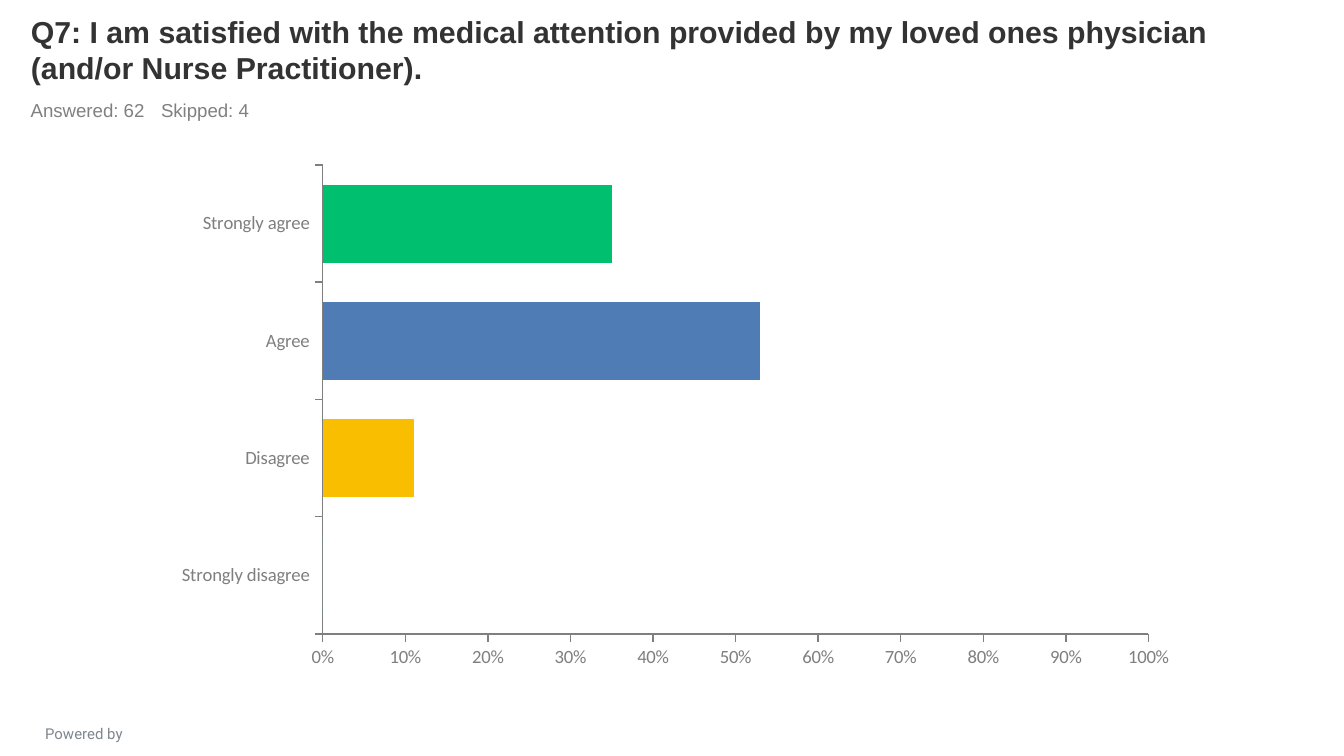
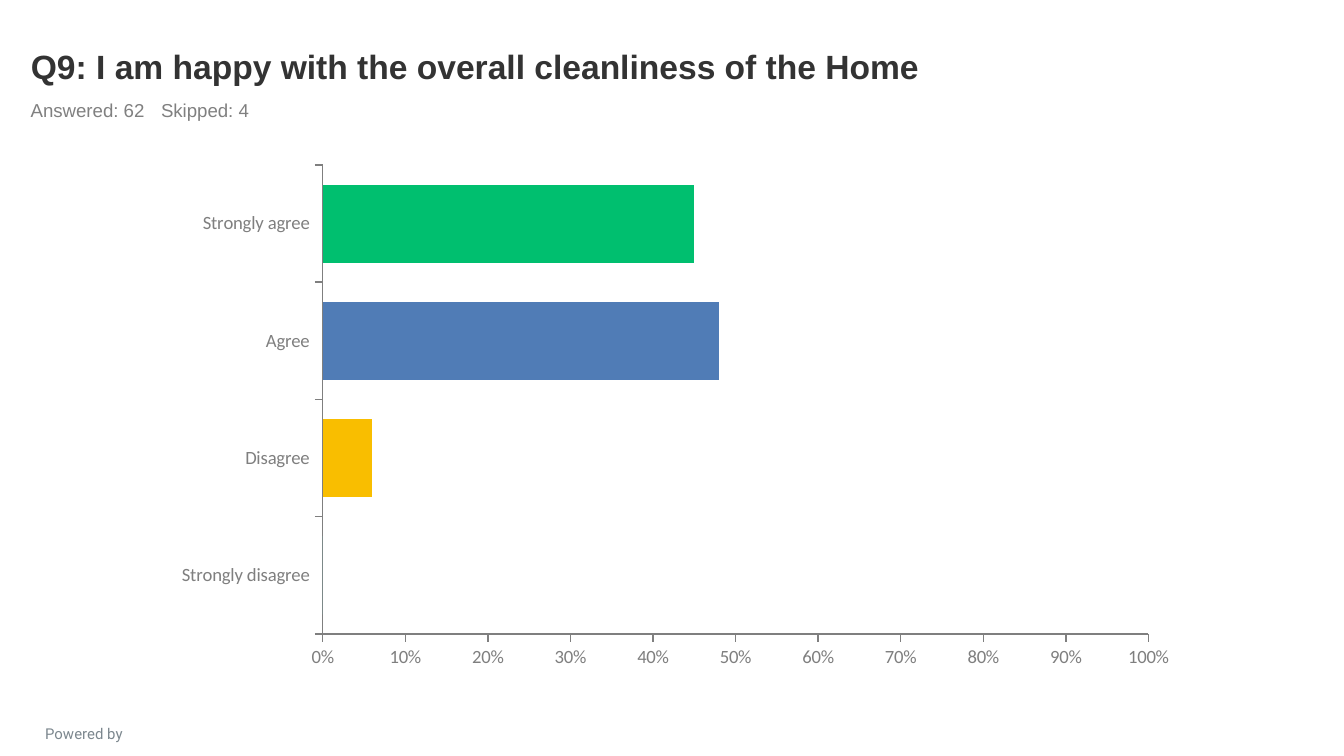
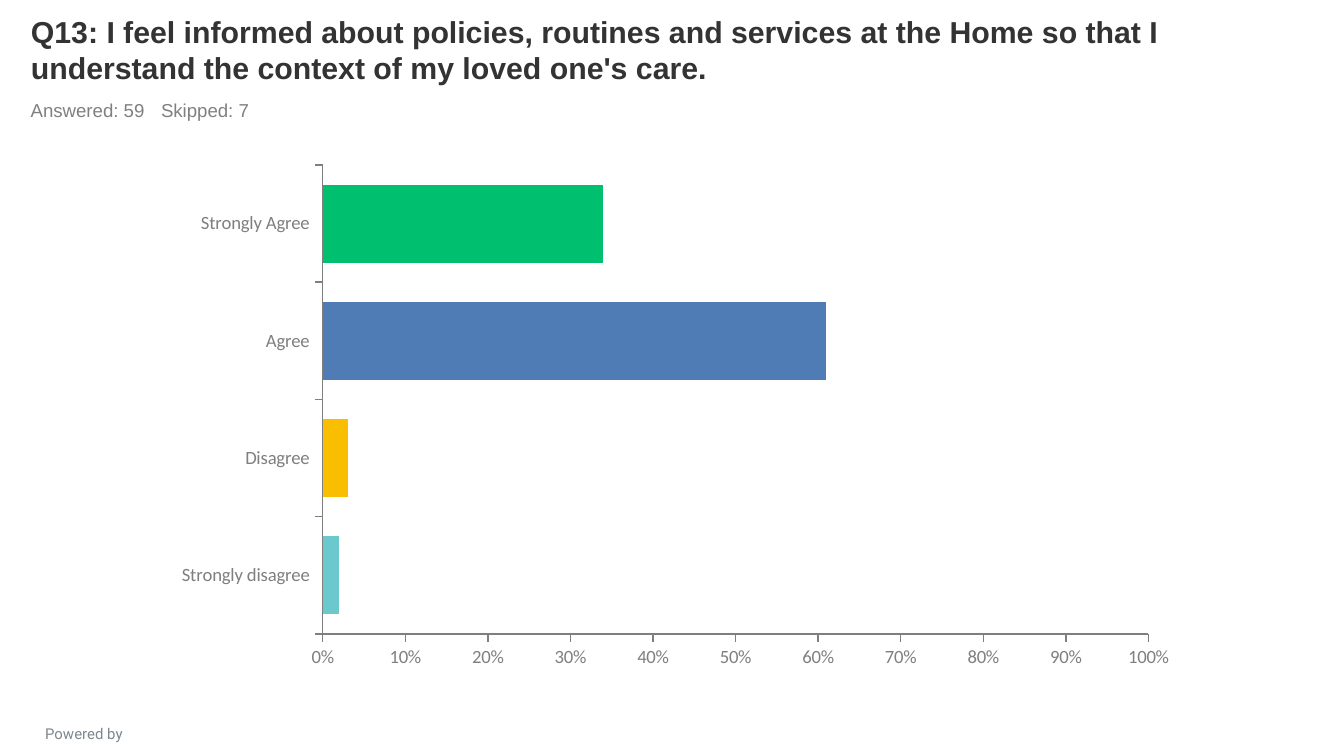
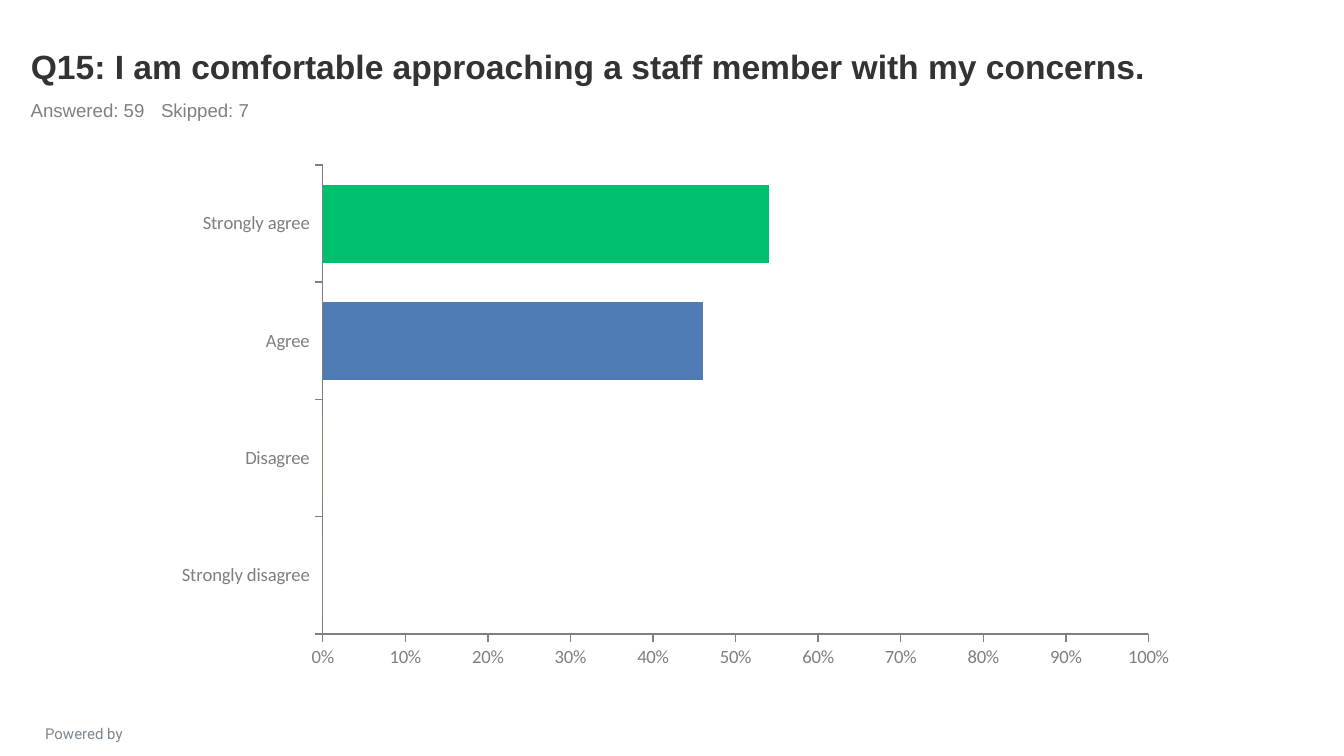
"""Build four survey slides, each with a question and its bar chart of answers."""
from lxml import etree
from pptx import Presentation
from pptx.chart.data import CategoryChartData
from pptx.dml.color import RGBColor
from pptx.enum import chart as ce, text as te
from pptx.oxml.ns import qn
from pptx.util import Inches, Pt

COLORS = {
    "title": "333333", "tally": "808080", "footer": "7C878E", "axis": "7F7F7F",
    "strongly_agree": "00BF6F", "agree": "507CB6",
    "disagree": "F9BE00", "strongly_disagree": "6BC8CD",
}
BARS = ["strongly_agree", "agree", "disagree", "strongly_disagree"]
REPLIES = ["Strongly agree", "Agree", "Disagree", "Strongly disagree"]
QUESTIONS = [
    ("Q7: I am satisfied with the medical attention provided by my loved ones "
     "physician (and/or Nurse Practitioner).",
     16.2, 62, 4, REPLIES, [0.35, 0.53, 0.11, 0]),
    ("Q9: I am happy with the overall cleanliness of the Home",
     18, 62, 4, REPLIES, [0.45, 0.48, 0.06, 0]),
    ("Q13: I feel informed about policies, routines and services at the Home "
     "so that I understand the context of my loved one's care.",
     16.2, 59, 7, ["Strongly Agree"] + REPLIES[1:], [0.34, 0.61, 0.03, 0.02]),
    ("Q15: I am comfortable approaching a staff member with my concerns.",
     18, 59, 7, REPLIES, [0.54, 0.46, 0, 0]),
]


def style_font(font, name, size, color, bold=False):
    font.name, font.size, font.bold = name, Pt(size), bold
    font.color.rgb = RGBColor.from_string(COLORS[color])


def write(sp, words, name, size, color, align=te.PP_ALIGN.LEFT, bold=False):
    tf = sp.text_frame
    tf.word_wrap = True
    tf.auto_size = te.MSO_AUTO_SIZE.NONE
    p = tf.paragraphs[0]
    p.text = words
    p.alignment = align
    for r in p.runs:
        style_font(r.font, name, size, color, bold)
    return p


prs = Presentation()
prs.slide_width = Inches(10)
prs.slide_height = prs.slide_width * 9 // 16

for question, size, answered, skipped, replies, shares in QUESTIONS:
    s = prs.slides.add_slide(prs.slide_layouts[5])

    title = s.shapes.title
    title.left, title.top = Inches(0.13), Inches(0.09)
    title.width, title.height = Inches(9), Inches(0.6)
    write(title, question, "Arial", size, "title", bold=True)
    title.text_frame.vertical_anchor = te.MSO_ANCHOR.BOTTOM

    tally = s.shapes.add_textbox(Inches(0.13), Inches(0.69), Inches(9), Inches(0.26))
    p = write(tally, f"Answered: {answered}\tSkipped: {skipped}", "Arial", 10, "tally")
    tabs = etree.SubElement(p._p.get_or_add_pPr(), qn("a:tabLst"))
    etree.SubElement(tabs, qn("a:tab"), pos=str(Inches(0.97)), algn="l")

    footer = s.shapes.add_textbox(Inches(0.05), Inches(5.34), Inches(1.15), Inches(0.18))
    write(footer, "Powered by", "Roboto", 8, "footer", te.PP_ALIGN.CENTER)

    data = CategoryChartData(number_format="0%")
    data.categories = replies
    data.add_series("Series 1", shares)
    chart = s.shapes.add_chart(
        ce.XL_CHART_TYPE.BAR_CLUSTERED, Inches(1.2), Inches(1.15),
        Inches(7.65), Inches(3.9), data).chart
    chart.has_legend = chart.has_title = False
    style_font(chart.font, "Calibri", 18, "title")

    plot = chart.plots[0]
    plot.gap_width, plot.overlap, plot.vary_by_categories = 50, 100, False
    series = plot.series[0]
    series.invert_if_negative = False
    for fmt, bar in [(series.format, BARS[0])] + [
            (series.points[i].format, bar) for i, bar in enumerate(BARS)]:
        fmt.fill.solid()
        fmt.fill.fore_color.rgb = RGBColor.from_string(COLORS[bar])

    for axis in (chart.category_axis, chart.value_axis):
        axis.has_major_gridlines = False
        axis.major_tick_mark = ce.XL_TICK_MARK.OUTSIDE
        axis.minor_tick_mark = ce.XL_TICK_MARK.NONE
        axis.format.line.width = Pt(0.75)
        axis.format.line.color.rgb = RGBColor.from_string(COLORS["axis"])
        style_font(axis.tick_labels.font, "Calibri", 10, "axis")
    chart.category_axis.reverse_order = True
    chart.category_axis.tick_label_position = ce.XL_TICK_LABEL_POSITION.LOW
    scale = chart.value_axis
    scale._element.find(qn("c:crosses")).set("val", "max")
    scale.minimum_scale, scale.maximum_scale, scale.major_unit = 0, 1, 0.1
    scale.tick_labels.number_format = "0%"
    scale.tick_labels.number_format_is_linked = False

prs.save("out.pptx")
